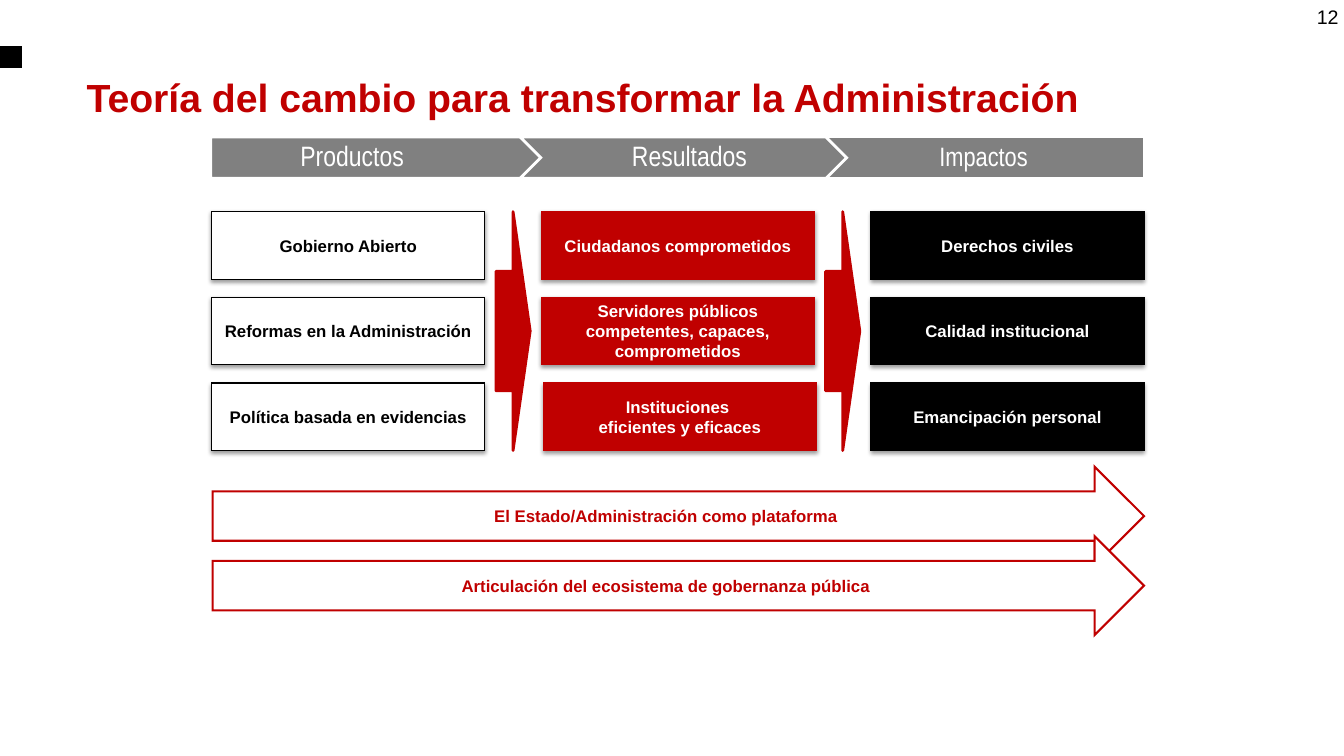
import dataclasses
import typing

import lxml.etree
import pptx
import pptx.dml.color
import pptx.enum.shapes
import pptx.enum.text
import pptx.oxml.ns
import pptx.util

SHAPE = pptx.enum.shapes.MSO_SHAPE
ALIGN = pptx.enum.text.PP_ALIGN
ANCHOR = pptx.enum.text.MSO_ANCHOR

COLOURS = {"red": "C00000", "black": "000000", "white": "FFFFFF", "grey": "808080"}

# The slide is a fine grid of square cells, 133.3 columns by 75 rows.
CELL = pptx.util.Inches(0.1)
COLUMNS, ROWS = 133.33, 75
LEFT, TOP = 21, 21
COLUMN_STEP, ROW_STEP = 32.7, 8.5
CARD_WIDTH, CARD_HEIGHT = 27.1, 6.7
STACK_HEIGHT = 2 * ROW_STEP + CARD_HEIGHT
HEADER_TOP, HEADER_HEIGHT = 13.6, 4.1


@dataclasses.dataclass
class Area:
    """Position and size in grid columns and rows."""
    column: float
    row: float
    width: float
    height: float

    def emu(self) -> tuple[int, ...]:
        return tuple(round(v * CELL) for v in dataclasses.astuple(self))


@dataclasses.dataclass
class Style:
    fill: str
    line: str
    line_width: float
    join: str = "miter"
    shadow: bool = False


@dataclasses.dataclass
class Font:
    size: float
    colour: str
    bold: bool = True
    name: str = "Arial"


@dataclasses.dataclass
class Stage:
    """One step of the chain: a header and a column of cards."""
    name: str
    name_column: float
    name_size: float
    header_shape: typing.Any
    header_column: float
    header_width: float
    fill: str
    line: str
    text: str
    cards: list[str]


STAGES = [
    Stage("Productos", 29.8, 20, SHAPE.PENTAGON, 20.9, 39.3, "white", "black", "black",
          ["Gobierno Abierto", "Reformas en la Administración",
           "Política basada en evidencias"]),
    Stage("Resultados", 62.7, 20, SHAPE.CHEVRON, 51.6, 32.4, "red", "red", "white",
          ["Ciudadanos comprometidos",
           "Servidores públicos competentes, capaces, comprometidos",
           "Instituciones \neficientes y eficaces"]),
    Stage("Impactos", 93.2, 19, SHAPE.RECTANGLE, 81.6, 31.9, "black", "black", "white",
          ["Derechos civiles", "Calidad institucional", "Emancipación personal"]),
]
FOUNDATIONS = ["El Estado/Administración como plataforma",
               "Articulación del ecosistema de gobernanza pública"]


def rgb(name: str) -> pptx.dml.color.RGBColor:
    return pptx.dml.color.RGBColor.from_string(COLOURS[name])


def add_child(parent: typing.Any, tag: str, **attributes: str) -> typing.Any:
    return lxml.etree.SubElement(parent, pptx.oxml.ns.qn(tag), attributes)


def add_shadow(sp: typing.Any) -> None:
    effects = sp._element.spPr.find(pptx.oxml.ns.qn("a:effectLst"))
    shadow = add_child(effects, "a:outerShdw", blurRad=str(pptx.util.Pt(3.1)),
                       dist=str(pptx.util.Pt(1.6)), dir="5400000", rotWithShape="0")
    colour = add_child(shadow, "a:srgbClr", val=COLOURS["black"])
    add_child(colour, "a:alpha", val="38000")


def write(sp: typing.Any, text: str, font: Font, align: typing.Any,
          anchor: typing.Any = ANCHOR.MIDDLE) -> None:
    tf = sp.text_frame
    tf.word_wrap = True
    tf.vertical_anchor = anchor
    p = tf.paragraphs[0]
    p.alignment = align
    for i, line in enumerate(text.split("\n")):
        if i:
            p.add_line_break()
        r = p.add_run()
        r.text = line
        r.font.name = font.name
        r.font.size = pptx.util.Pt(font.size)
        r.font.bold = font.bold
        r.font.color.rgb = rgb(font.colour)


def add_figure(s: typing.Any, kind: typing.Any, area: Area, style: Style) -> typing.Any:
    sp = s.shapes.add_shape(kind, *area.emu())
    sp.shadow.inherit = False
    sp.fill.solid()
    sp.fill.fore_color.rgb = rgb(style.fill)
    sp.line.color.rgb = rgb(style.line)
    sp.line.width = pptx.util.Pt(style.line_width)
    limit = {"lim": "800000"} if style.join == "miter" else {}
    add_child(sp.line._get_or_add_ln(), f"a:{style.join}", **limit)
    if style.shadow:
        add_shadow(sp)
    return sp


def add_label(s: typing.Any, area: Area, text: str, font: Font,
              align: typing.Any = ALIGN.LEFT, anchor: typing.Any = ANCHOR.MIDDLE) -> typing.Any:
    sp = s.shapes.add_textbox(*area.emu())
    write(sp, text, font, align, anchor)
    return sp


def add_headers(s: typing.Any) -> None:
    """Draw the band, with the plain end behind and the chevron in front."""
    style = Style("grey", "white", 2)
    for i in (2, 0, 1):
        stage = STAGES[i]
        add_figure(s, stage.header_shape,
                   Area(stage.header_column, HEADER_TOP, stage.header_width, HEADER_HEIGHT),
                   style)
    for stage in STAGES:
        sp = add_label(s, Area(stage.name_column, HEADER_TOP, 18, HEADER_HEIGHT), stage.name,
                       Font(stage.name_size, "white", False, "Arial Narrow"))
        tf = sp.text_frame
        tf.margin_left = tf.margin_right = tf.margin_top = 0
        tf.margin_bottom = pptx.util.Inches(0.04)


def add_stage_cards(s: typing.Any, index: int, stage: Stage) -> None:
    style = Style(stage.fill, stage.line, 0.75, shadow=True)
    for i, text in enumerate(stage.cards):
        area = Area(LEFT + index * COLUMN_STEP, TOP + i * ROW_STEP, CARD_WIDTH, CARD_HEIGHT)
        if "\n" in text:
            area.column += 0.2
        sp = add_figure(s, SHAPE.RECTANGLE, area, style)
        write(sp, text, Font(12, stage.text), ALIGN.CENTER)


def main() -> None:
    prs = pptx.Presentation()
    prs.slide_width, prs.slide_height = round(COLUMNS * CELL), ROWS * CELL
    s = prs.slides.add_slide(prs.slide_layouts[6])

    add_figure(s, SHAPE.RECTANGLE, Area(0, 4.6, 2.1, 2.1), Style("black", "black", 0.25))
    add_label(s, Area(7.6, 5.6, 109.1, 6.8),
              "Teoría del cambio para transformar la Administración",
              Font(28, "red"), anchor=ANCHOR.BOTTOM)
    add_headers(s)

    for i, stage in enumerate(STAGES):
        add_stage_cards(s, i, stage)
    for i in range(len(STAGES) - 1):
        add_figure(s, SHAPE.RIGHT_ARROW,
                   Area(LEFT + i * COLUMN_STEP + 28.2, TOP, 3.4, STACK_HEIGHT),
                   Style("red", "red", 2, join="round"))

    for i, text in enumerate(FOUNDATIONS):
        sp = add_figure(s, SHAPE.RIGHT_ARROW, Area(LEFT + 0.1, 46.3 + i * 6.9, 92.4, 9.8),
                        Style("white", "red", 1.5))
        write(sp, text, Font(12, "red"), ALIGN.CENTER)

    add_label(s, Area(127.3, 0, 5.5, 4), "12", Font(14, "black", False),
              ALIGN.RIGHT, ANCHOR.TOP).text_frame.margin_right = 0
    prs.save("out.pptx")


if __name__ == "__main__":
    main()
